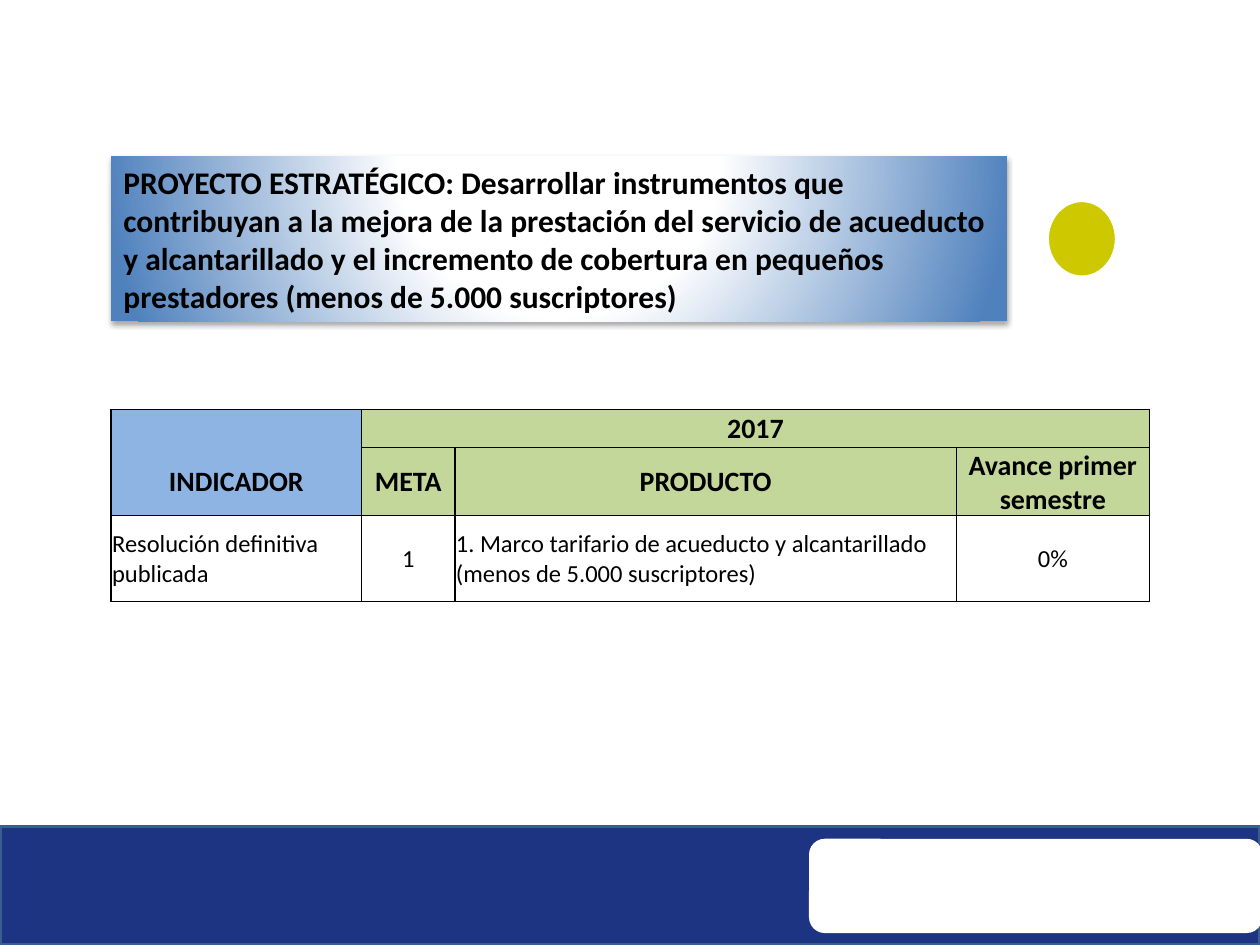
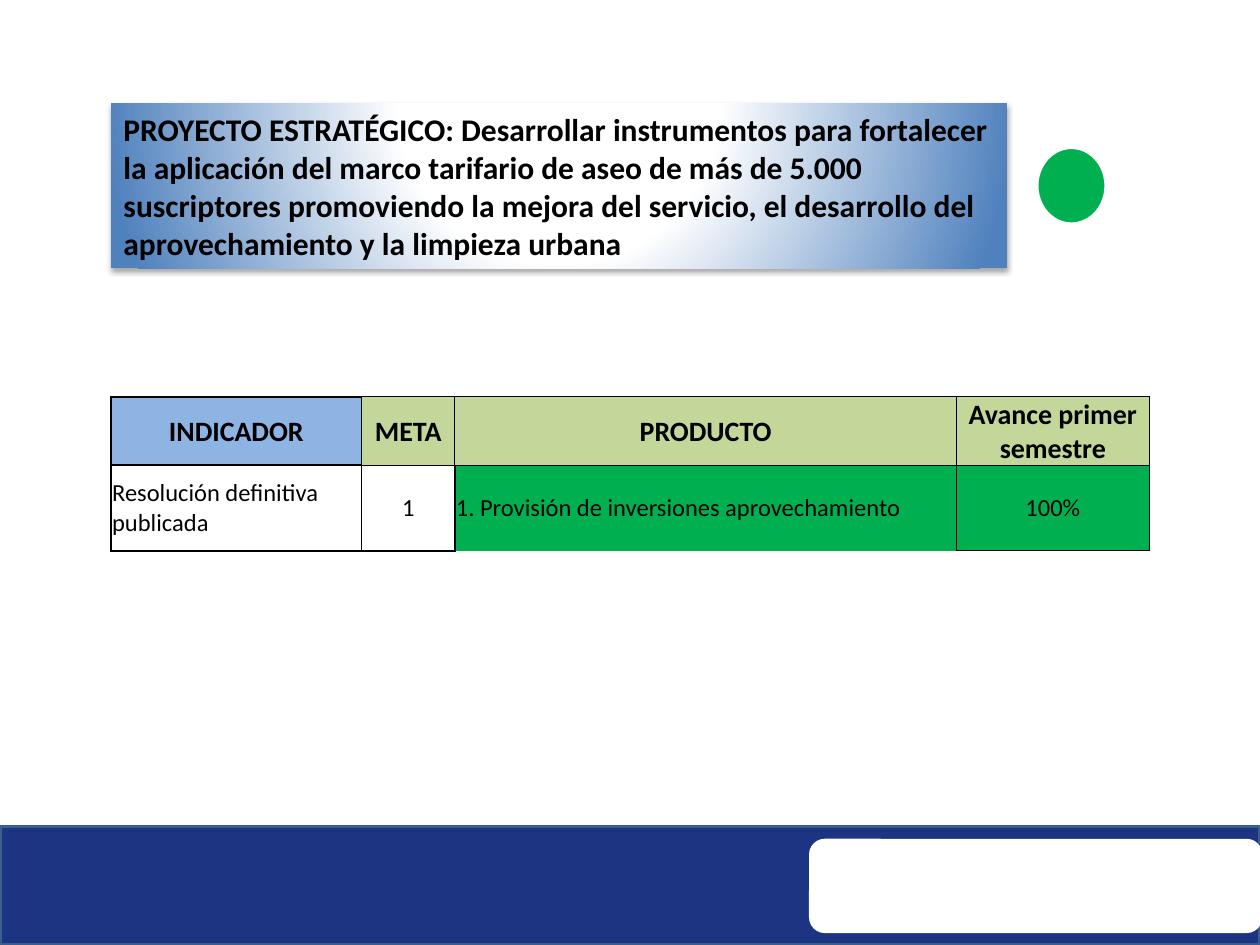
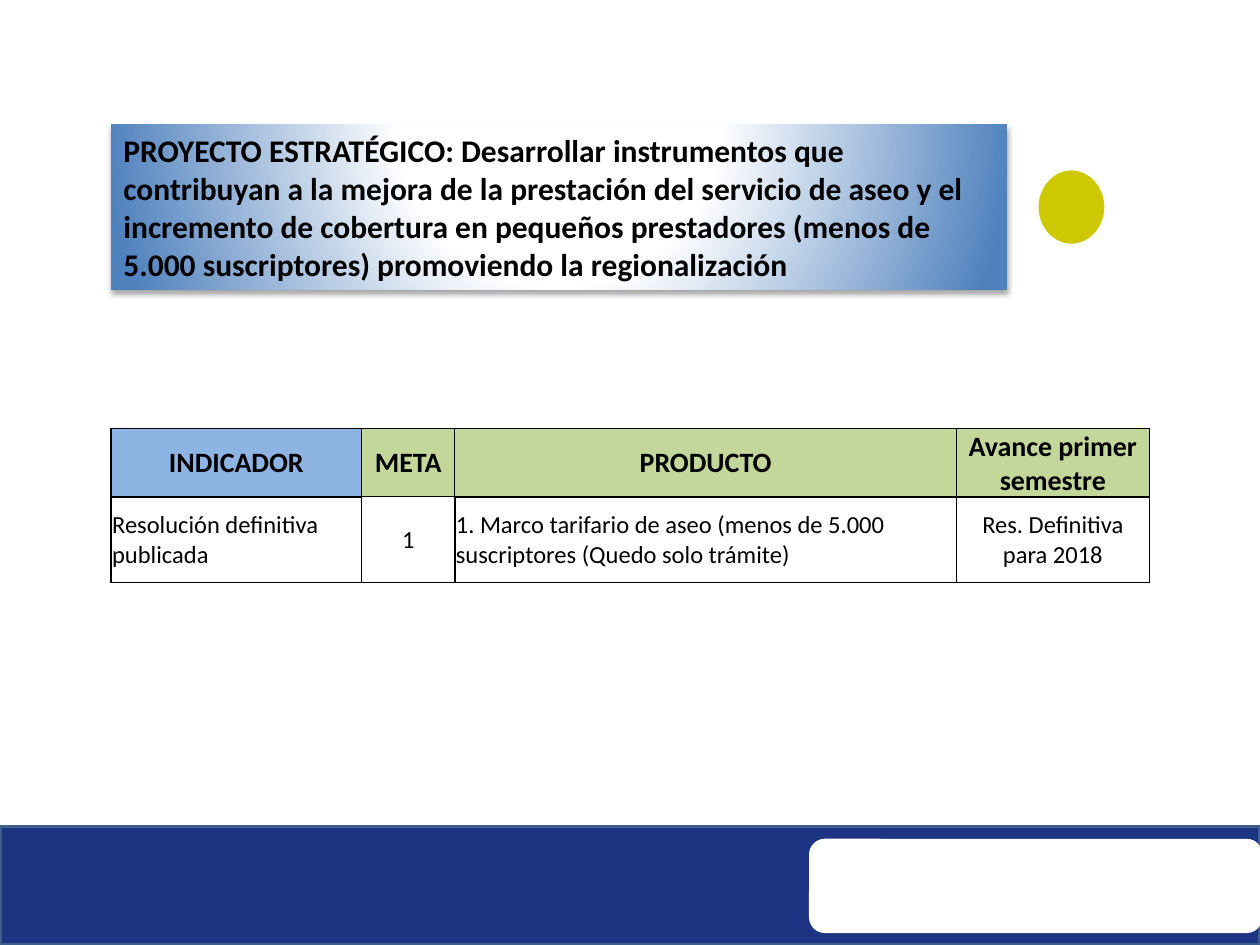
import pptx
import pptx.dml.color
import pptx.enum.shapes
import pptx.enum.text
import pptx.oxml
import pptx.oxml.ns
import pptx.util

Cm = pptx.util.Cm
Pt = pptx.util.Pt
SHAPES = pptx.enum.shapes.MSO_SHAPE
ALIGN = pptx.enum.text.PP_ALIGN
MIDDLE = pptx.enum.text.MSO_ANCHOR.MIDDLE
NS = pptx.oxml.ns.nsdecls("a")

FONT = "Calibri"
BLACK, WHITE = "000000", "FFFFFF"
NAVY, NAVY_EDGE = "1C3481", "3A5F8C"
TITLE_BLUE = "4F81BD"
HEAD_BLUE, HEAD_GREEN = "8DB4E2", "C4D79B"
PENDING, DONE = "CDC800", "00B050"

SLIDE_W, SLIDE_H = 25.4, 19.05
LEFT = 2.24
TITLE_W, TITLE_H = 18.06, 3.33
LIGHT_W, LIGHT_H = 1.4, 1.55
COLS = (5.05, 1.88, 10.11, 3.89)
YEAR_ROW_H, HEAD_ROW_H, DATA_ROW_H = 0.76, 1.37, 1.73
HEADINGS = ("INDICADOR", "META", "PRODUCTO", "Avance primer semestre")
INDICATOR = "Resolución definitiva publicada"

# Borders: one string per cell, in the order left, top, right, bottom.
# 1 is a 1 pt line, h a half-point line, - no line.
REPORTS = [
    dict(
        title="PROYECTO ESTRATÉGICO: Desarrollar instrumentos que contribuyan a la mejora "
              "de la prestación del servicio de acueducto y alcantarillado y el incremento "
              "de cobertura en pequeños prestadores (menos de 5.000 suscriptores)",
        title_top=3.15, light=PENDING, light_left=21.11, table_top=8.26, year="2017",
        data=(INDICATOR, "1", "1. Marco tarifario de acueducto y alcantarillado "
              "(menos de 5.000 suscriptores)", "0%"),
        data_fills=(None,) * 4,
        borders=["111- 111h 111h 111h", "1-h1 hh1h 1111 1hhh", "1111 1h11 11h1 hhhh"],
    ),
    dict(
        title="PROYECTO ESTRATÉGICO: Desarrollar instrumentos para fortalecer la aplicación "
              "del marco tarifario de aseo de más de 5.000 suscriptores promoviendo la mejora "
              "del servicio, el desarrollo del aprovechamiento y la limpieza urbana",
        title_top=2.08, light=DONE, light_left=20.9, table_top=8.0, year=None,
        data=(INDICATOR, "1", "1. Provisión de inversiones aprovechamiento", "100%"),
        data_fills=(None, None, DONE, DONE),
        borders=["1111 1hhh hhhh hhhh", "1111 1h11 1hh- hhhh"],
    ),
    dict(
        title="PROYECTO ESTRATÉGICO: Desarrollar instrumentos que contribuyan a la mejora "
              "de la prestación del servicio de aseo y el incremento de cobertura en pequeños "
              "prestadores (menos de 5.000 suscriptores) promoviendo la regionalización",
        title_top=2.51, light=PENDING, light_left=20.9, table_top=8.64, year=None,
        data=(INDICATOR, "1", "1. Marco tarifario de aseo (menos de 5.000 suscriptores "
              "(Quedo solo trámite)", "Res. Definitiva para 2018"),
        data_fills=(None,) * 4,
        borders=["1111 1hhh hhh1 hhh1", "1111 1h11 1111 1111"],
    ),
]


def rgb(color):
    return pptx.dml.color.RGBColor.from_string(color)


def paint(fill, color):
    """Fill with a colour, or leave empty when there is none."""
    if color:
        fill.solid()
        fill.fore_color.rgb = rgb(color)
    else:
        fill.background()


def add_shape(slide, kind, box, color=None, edge=None):
    sp = slide.shapes.add_shape(kind, *map(Cm, box))
    sp.shadow.inherit = False
    if color:
        paint(sp.fill, color)
    paint(sp.line.fill, edge)
    if edge:
        sp.line.width = Pt(2)
    return sp


def write(tf, text, size, bold, align):
    p = tf.paragraphs[0]
    p.text = text
    p.alignment = align
    p.font.name = FONT
    p.font.size = Pt(size)
    p.font.bold = bold
    p.font.color.rgb = rgb(BLACK)


def add_footer(slide, box):
    left, top, width, height = box
    add_shape(slide, SHAPES.RECTANGLE, box, NAVY, NAVY_EDGE)
    add_shape(slide, SHAPES.ROUNDED_RECTANGLE,
              (left + 16.31, top + 0.25, width - 16.26, height - 0.49), WHITE)


def add_glow(sp):
    """Give a shape the radial white-to-blue fill and a soft shadow below."""
    stops = "".join(f'<a:gs pos="{pos}000"><a:srgbClr val="{color}"/></a:gs>'
                    for pos, color in ((0, WHITE), (35, WHITE), (100, TITLE_BLUE)))
    spPr = sp.element.spPr
    spPr.find(pptx.oxml.ns.qn("a:prstGeom")).addnext(pptx.oxml.parse_xml(
        f'<a:gradFill {NS} rotWithShape="1"><a:gsLst>{stops}</a:gsLst><a:path path="circle">'
        '<a:fillToRect l="50000" t="-80000" r="50000" b="180000"/></a:path></a:gradFill>'))
    spPr.find(pptx.oxml.ns.qn("a:effectLst")).append(pptx.oxml.parse_xml(
        f'<a:outerShdw {NS} blurRad="40000" dist="23000" dir="5400000" rotWithShape="0">'
        f'<a:srgbClr val="{BLACK}"><a:alpha val="35000"/></a:srgbClr></a:outerShdw>'))


def add_title(slide, box, text):
    sp = add_shape(slide, SHAPES.RECTANGLE, box)
    add_glow(sp)
    tf = sp.text_frame
    tf.word_wrap = True
    tf.auto_size = pptx.enum.text.MSO_AUTO_SIZE.SHAPE_TO_FIT_TEXT
    tf.vertical_anchor = MIDDLE
    write(tf, text, 18, True, ALIGN.LEFT)


def set_borders(cell, widths):
    tcPr = cell._tc.get_or_add_tcPr()
    sides = dict(zip("LTRB", widths))
    for side in "LRTB":
        width = {"1": 12700, "h": 6350, "-": 0}[sides[side]]
        line = f'<a:solidFill><a:srgbClr val="{BLACK}"/></a:solidFill>' if width else "<a:noFill/>"
        tcPr.append(pptx.oxml.parse_xml(f'<a:ln{side} {NS} w="{width}">{line}</a:ln{side}>'))


def add_progress_table(slide, left, top, report):
    head_fills = (HEAD_BLUE,) + (HEAD_GREEN,) * 3
    rows = [(HEADINGS, head_fills, HEAD_ROW_H),
            (report["data"], report["data_fills"], DATA_ROW_H)]
    if report["year"]:
        rows.insert(0, (("", report["year"], "", ""), head_fills, YEAR_ROW_H))
    heights = [height for _, _, height in rows]
    frame = slide.shapes.add_table(len(rows), len(COLS), Cm(left), Cm(top),
                                   Cm(sum(COLS)), Cm(sum(heights)))
    table = frame.table
    table.first_row = table.horz_banding = False
    for column, width in zip(table.columns, COLS):
        column.width = Cm(width)
    for i, (texts, fills, height) in enumerate(rows):
        table.rows[i].height = Cm(height)
        is_data = i == len(rows) - 1
        for j, widths in enumerate(report["borders"][i].split()):
            cell = table.cell(i, j)
            cell.margin_left = cell.margin_right = cell.margin_top = Cm(0.02)
            cell.margin_bottom = 0
            cell.vertical_anchor = MIDDLE
            set_borders(cell, widths)
            paint(cell.fill, fills[j])
            align = ALIGN.LEFT if is_data and j in (0, 2) else ALIGN.CENTER
            write(cell.text_frame, texts[j], 14 if is_data else 16, not is_data, align)
    if report["year"]:
        table.cell(0, 1).merge(table.cell(0, 3))


def add_report(prs, report):
    slide = prs.slides.add_slide(prs.slide_layouts[6])
    add_footer(slide, (0, 16.66, SLIDE_W, 2.39))
    top = report["title_top"]
    add_title(slide, (LEFT, top, TITLE_W, TITLE_H), report["title"])
    add_progress_table(slide, LEFT, report["table_top"], report)
    light_top = top + (TITLE_H - LIGHT_H) / 2
    add_shape(slide, SHAPES.OVAL, (report["light_left"], light_top, LIGHT_W, LIGHT_H),
              report["light"], WHITE)


def main():
    prs = pptx.Presentation()
    prs.slide_width, prs.slide_height = Cm(SLIDE_W), Cm(SLIDE_H)
    for report in REPORTS:
        add_report(prs, report)
    prs.save("out.pptx")


if __name__ == "__main__":
    main()
